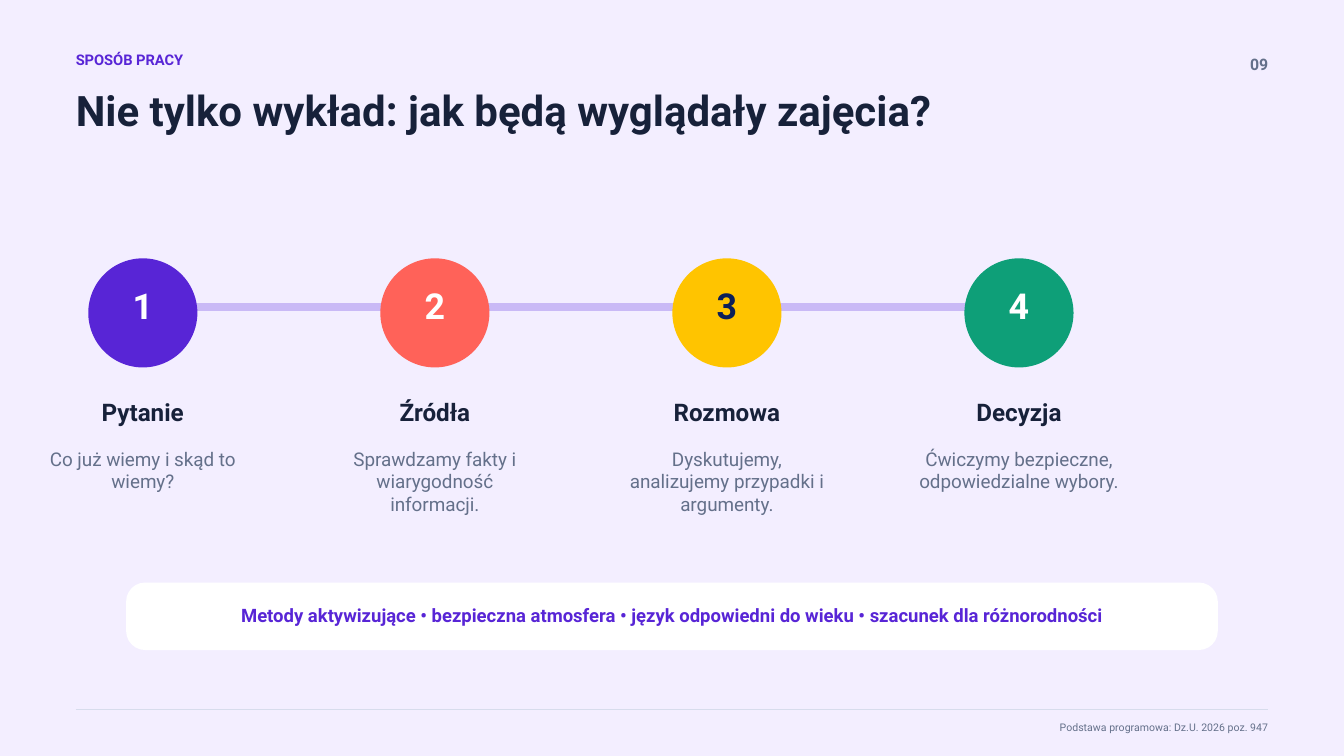
from dataclasses import dataclass

from lxml import etree
from pptx import Presentation
from pptx import util as u
from pptx.dml.color import RGBColor
from pptx.enum import shapes, text
from pptx.oxml.ns import qn


@dataclass(frozen=True)
class Theme:
    font: str = "Roboto"
    # Colours
    paper: str = "F3EEFF"
    violet: str = "5825D6"
    ink: str = "17213A"
    muted: str = "64708A"
    coral: str = "FF6259"
    yellow: str = "FFC400"
    navy: str = "0B1F59"
    green: str = "0E9F78"
    white: str = "FFFFFF"
    track: str = "C9B9F6"
    rule: str = "D7DCEC"
    # Type sizes
    title: float = 30
    number: float = 25.5
    heading: float = 17.3
    body: float = 13.5
    banner: float = 13.2
    page_number: float = 11.3
    kicker: float = 10.5
    footer: float = 7.5


class SlideBuilder:
    def __init__(self, page, theme):
        self.page = page
        self.theme = theme
        fill = page.background.fill
        fill.solid()
        fill.fore_color.rgb = RGBColor.from_string(theme.paper)

    def set_text(self, box, words, size, colour, bold=True, align="LEFT",
                 anchor="TOP", spacing=1.0):
        frame = box.text_frame
        frame_format = {
            "word_wrap": True,
            "auto_size": text.MSO_AUTO_SIZE.NONE,
            "vertical_anchor": getattr(text.MSO_ANCHOR, anchor),
            "margin_left": 0, "margin_top": 0,
            "margin_right": 0, "margin_bottom": 0,
        }
        for name, value in frame_format.items():
            setattr(frame, name, value)
        para = frame.paragraphs[0]
        para.alignment = getattr(text.PP_ALIGN, align)
        para.line_spacing = spacing
        span = para.add_run()
        span.text = words
        font_format = {"name": self.theme.font, "size": u.Pt(size), "bold": bold}
        for name, value in font_format.items():
            setattr(span.font, name, value)
        span.font.color.rgb = RGBColor.from_string(colour)

    def title(self, words, left, top, width, height):
        box = self.page.shapes.title
        place = {"left": left, "top": top, "width": width, "height": height}
        for name, value in place.items():
            setattr(box, name, u.Cm(value))
        self.set_text(box, words, self.theme.title, self.theme.ink)

    def label(self, words, left, top, width, height, size, colour, **style):
        box = self.page.shapes.add_textbox(
            u.Cm(left), u.Cm(top), u.Cm(width), u.Cm(height))
        self.set_text(box, words, size, colour, **style)

    def shape(self, kind, left, top, width, height, colour):
        shape = self.page.shapes.add_shape(
            kind, u.Cm(left), u.Cm(top), u.Cm(width), u.Cm(height))
        shape.shadow.inherit = False
        shape.fill.solid()
        shape.fill.fore_color.rgb = RGBColor.from_string(colour)
        shape.line.fill.background()
        return shape

    def line(self, left, right, top, colour, weight):
        line = self.page.shapes.add_connector(
            shapes.MSO_CONNECTOR.STRAIGHT,
            u.Cm(left), u.Cm(top), u.Cm(right), u.Cm(top))
        line.line.color.rgb = RGBColor.from_string(colour)
        line.line.width = u.Pt(weight)
        etree.SubElement(line._element.spPr, qn("a:effectLst"))

    def step(self, center, number, heading, body, fill, number_colour):
        theme = self.theme
        diameter, heading_width, body_width = 2.75, 3.81, 5.08
        left = center - diameter / 2
        self.shape(shapes.MSO_SHAPE.OVAL, left, 6.51, diameter, diameter, fill)
        self.label(str(number), left, 7.04, diameter, 1.32, theme.number,
                   number_colour, align="CENTER", anchor="MIDDLE")
        self.label(heading, center - heading_width / 2, 10, heading_width, 1.02,
                   theme.heading, theme.ink, align="CENTER")
        self.label(body, center - body_width / 2, 11.27, body_width, 2.49,
                   theme.body, theme.muted, bold=False, align="CENTER")


def main():
    theme = Theme()
    deck = Presentation()
    deck.slide_width, deck.slide_height = u.Cm(33.87), u.Cm(19.05)
    slide = SlideBuilder(deck.slides.add_slide(deck.slide_layouts[5]), theme)
    left, right = 1.91, 31.96

    # Header
    slide.label("SPOSÓB PRACY", left, 1.27, 18.52, 0.64, theme.kicker, theme.violet)
    slide.title("Nie tylko wykład: jak będą wyglądały zajęcia?", left, 2.12, 27.51, 2.06)
    slide.label("09", right - 1.27, 1.38, 1.27, 0.69, theme.page_number,
                theme.muted, align="RIGHT")

    # Four steps on a track
    first_center, pitch = 3.6, 7.36
    steps = [
        ("Pytanie", "Co już wiemy i skąd to wiemy?", theme.violet, theme.white),
        ("Źródła", "Sprawdzamy fakty i wiarygodność informacji.",
         theme.coral, theme.white),
        ("Rozmowa", "Dyskutujemy, analizujemy przypadki i argumenty.",
         theme.yellow, theme.navy),
        ("Decyzja", "Ćwiczymy bezpieczne, odpowiedzialne wybory.",
         theme.green, theme.white),
    ]
    slide.line(first_center, 25.83, 7.73, theme.track, 6)
    for index, details in enumerate(steps):
        slide.step(first_center + index * pitch, index + 1, *details)

    # Banner
    banner = slide.shape(shapes.MSO_SHAPE.ROUNDED_RECTANGLE,
                         3.18, 14.68, 27.51, 1.7, theme.white)
    banner.adjustments[0] = 0.28
    slide.label("Metody aktywizujące • bezpieczna atmosfera • język odpowiedni "
                "do wieku • szacunek dla różnorodności",
                3.76, 15.14, 26.34, 0.79, theme.banner, theme.violet,
                align="CENTER", anchor="MIDDLE", spacing=0.9)

    # Footer
    slide.line(left, right, 17.89, theme.rule, 0.75)
    slide.label("Podstawa programowa: Dz.U. 2026 poz. 947", right - 18.47, 18.16,
                18.47, 0.48, theme.footer, theme.muted, bold=False, align="RIGHT")

    deck.save("out.pptx")


if __name__ == "__main__":
    main()
